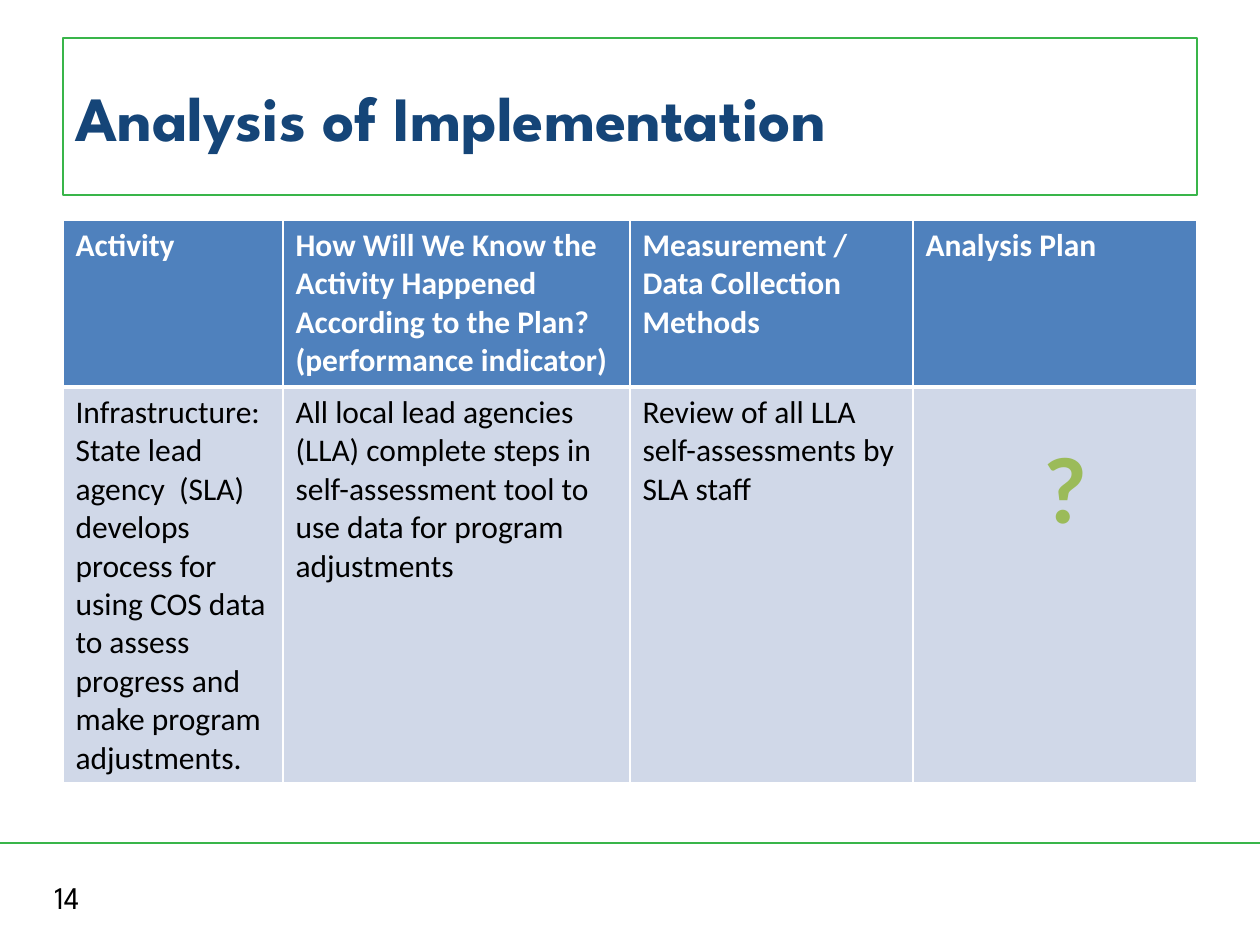
from lxml import etree
from pptx import Presentation
from pptx.dml.color import RGBColor
from pptx.enum.shapes import MSO_CONNECTOR, MSO_SHAPE
from pptx.enum.text import MSO_ANCHOR, PP_ALIGN
from pptx.oxml.ns import qn
from pptx.util import Pt

EMU_PER_PX = 914400 / 126
COLORS = {
    "green": "39B54A", "navy": "154578", "header": "4F81BD", "body": "D0D8E8",
    "white": "FFFFFF", "black": "000000", "question": "9BBB59", "outline": "FEFEFE",
}
COLUMN_WIDTHS = [220, 347, 283, 284]
ROW_HEIGHTS = [167, 396]
ROWS = [
    ["Activity",
     "How Will We Know the Activity Happened According to the Plan? (performance indicator)",
     "Measurement / Data Collection Methods",
     "Analysis Plan"],
    ["Infrastructure: State lead agency  (SLA) develops process for using COS data "
     "to assess progress and make program adjustments.",
     "All local lead agencies (LLA) complete steps in self-assessment tool to use data "
     "for program adjustments",
     "Review of all LLA self-assessments by SLA staff",
     ""],
]
ROW_STYLES = [
    {"fill": "header", "color": "white", "bold": True, "bottom": 3},
    {"fill": "body", "color": "black", "bold": False, "bottom": 1},
]


def px(value):
    return round(value * EMU_PER_PX)


def box(*lengths):
    return [px(length) for length in lengths]


def rgb(name):
    return RGBColor.from_string(COLORS[name])


def write(frame, text, color, alignment=PP_ALIGN.LEFT, **font_format):
    frame.word_wrap = True
    paragraph = frame.paragraphs[0]
    paragraph.alignment = alignment
    run = paragraph.add_run()
    run.text = text
    for name, value in font_format.items():
        setattr(run.font, name, value)
    run.font.color.rgb = rgb(color)
    return run


def add_line_element(parent, tag, color, points, index):
    line = etree.Element(qn(tag), w=str(Pt(points)))
    fill = etree.SubElement(line, qn("a:solidFill"))
    etree.SubElement(fill, qn("a:srgbClr"), val=COLORS[color])
    parent.insert(index, line)


def add_text(slide, bounds, text, color, **text_format):
    shape = slide.shapes.add_textbox(*box(*bounds))
    return write(shape.text_frame, text, color, **text_format)


def add_title(slide, bounds, text):
    shape = slide.shapes.add_shape(MSO_SHAPE.RECTANGLE, *box(*bounds))
    shape.shadow.inherit = False
    shape.fill.background()
    shape.line.color.rgb = rgb("green")
    shape.line.width = Pt(1)
    shape.text_frame.vertical_anchor = MSO_ANCHOR.MIDDLE
    write(shape.text_frame, text, "navy", name="League Spartan", size=Pt(36), bold=True)


def add_rule(slide, y, width):
    connector = slide.shapes.add_connector(MSO_CONNECTOR.STRAIGHT, *box(0, y, width, y))
    connector.line.color.rgb = rgb("green")
    connector.line.width = Pt(1.5)
    etree.SubElement(connector._element.spPr, qn("a:effectLst"))


def style_cell(cell, text, style, top):
    cell.fill.solid()
    cell.fill.fore_color.rgb = rgb(style["fill"])
    borders = {"a:lnL": 1, "a:lnR": 1, "a:lnT": top, "a:lnB": style["bottom"]}
    properties = cell._tc.get_or_add_tcPr()
    for index, (tag, points) in enumerate(borders.items()):
        add_line_element(properties, tag, "white", points, index)
    if text:
        write(cell.text_frame, text, style["color"],
              name="Calibri", size=Pt(18), bold=style["bold"])


def add_plan_table(slide, left, top):
    bounds = box(left, top, sum(COLUMN_WIDTHS), sum(ROW_HEIGHTS))
    table = slide.shapes.add_table(len(ROWS), len(COLUMN_WIDTHS), *bounds).table
    for column, width in zip(table.columns, COLUMN_WIDTHS):
        column.width = px(width)
    border_above = 1
    for row, height, texts, style in zip(table.rows, ROW_HEIGHTS, ROWS, ROW_STYLES):
        row.height = px(height)
        for cell, text in zip(row.cells, texts):
            style_cell(cell, text, style, border_above)
        border_above = style["bottom"]


def main():
    presentation = Presentation()
    presentation.slide_width, presentation.slide_height = box(1260, 945)
    slide = presentation.slides.add_slide(presentation.slide_layouts[6])
    add_rule(slide, 843, 1260)
    add_text(slide, (42, 872, 294, 50), "14", "black", name="League Spartan", size=Pt(18))
    add_title(slide, (63, 38, 1134, 157), "Analysis of Implementation")
    add_plan_table(slide, 63, 220)
    question = add_text(slide, (976, 423, 179, 127), "?", "question",
                        alignment=PP_ALIGN.CENTER, name="Calibri", size=Pt(54), bold=True)
    add_line_element(question.font._element, "a:ln", "outline", 1.5, 0)
    presentation.save("out.pptx")


if __name__ == "__main__":
    main()
